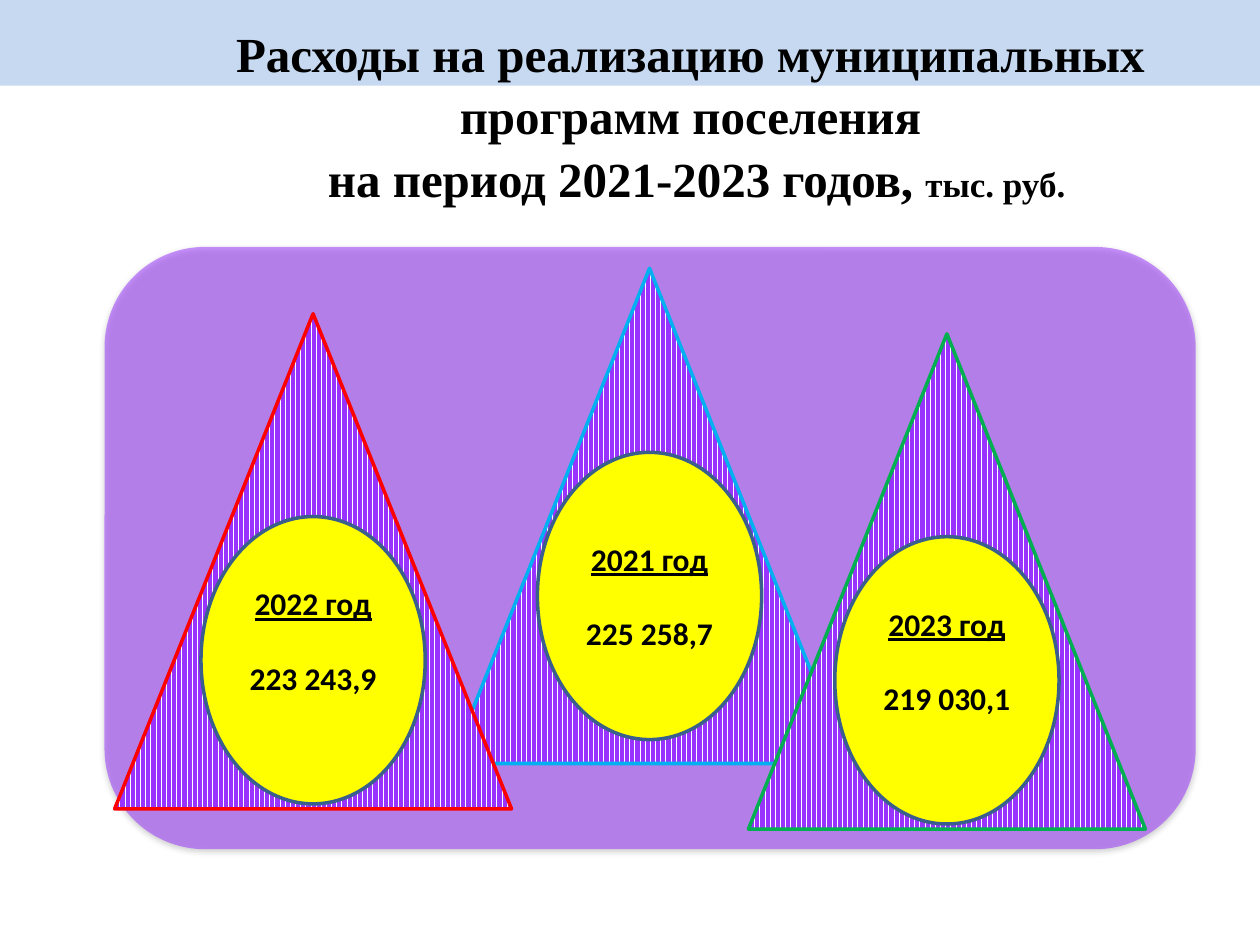
from dataclasses import dataclass

from lxml.etree import SubElement
from pptx import Presentation
from pptx.dml.color import RGBColor
from pptx.enum.dml import MSO_PATTERN
from pptx.enum.shapes import MSO_SHAPE as Shape
from pptx.enum.text import MSO_ANCHOR as Anchor, PP_ALIGN as Align
from pptx.oxml.ns import qn
from pptx.util import Inches, Pt


@dataclass(frozen=True)
class Theme:
    band: str = "C6D9F1"
    purple: str = "9933FF"
    white: str = "FFFFFF"
    yellow: str = "FFFF00"
    oval_line: str = "3A5F8C"
    ink: str = "000000"
    title_font: str = "Times New Roman"
    body_font: str = "Calibri"
    title_size: int = 28
    unit_size: int = 20
    body_size: int = 18


THEME = Theme()

# year, amount, outline, triangle left and top, oval drop, bottom text inset
YEARS = [
    ("2021 год", "225\u00a0258,7", "00B0F0", 3.58, 2.13, 1.46, 0.05),
    ("2022 год", "223\u00a0243,9", "FF0000", 0.91, 2.49, 1.61, 0.36),
    ("2023 год", "219\u00a0030,1", "00B050", 5.94, 2.65, 1.61, 0.36),
]
TRIANGLE_WIDTH, TRIANGLE_HEIGHT = 3.15, 3.93
OVAL_WIDTH, OVAL_HEIGHT = 1.78, 2.28


def rgb(code):
    return RGBColor.from_string(code)


def add_figure(slide, kind, box, fill=None, line=None):
    figure = slide.shapes.add_shape(kind, *map(Inches, box))
    figure.shadow.inherit = False
    if fill:
        figure.fill.solid()
        figure.fill.fore_color.rgb = rgb(fill)
    if line:
        figure.line.color.rgb = rgb(line)
        figure.line.width = Pt(2)
    else:
        figure.line.fill.background()
    return figure


def add_run(paragraph, text, **font_format):
    run = paragraph.add_run()
    run.text = text
    run.font.color.rgb = rgb(THEME.ink)
    for name, value in {"bold": True, **font_format}.items():
        setattr(run.font, name, value)


def add_title(slide):
    title = slide.shapes.add_textbox(*map(Inches, (1.15, 0.11, 8.66, 1.51)))
    frame = title.text_frame
    frame.word_wrap = True
    look = {"name": THEME.title_font, "size": Pt(THEME.title_size)}
    subject, period = frame.paragraphs[0], frame.add_paragraph()
    for paragraph in (subject, period):
        paragraph.alignment = Align.CENTER
        paragraph.line_spacing = 1.06
    period._p.get_or_add_pPr().set("marL", str(Inches(0.1)))
    add_run(subject, "Расходы на реализацию муниципальных программ поселения", **look)
    add_run(period, "на период 2021-2023 годов, ", **look)
    add_run(period, "тыс. руб.", **{**look, "size": Pt(THEME.unit_size)})


def add_panel(slide):
    """Translucent rounded panel with a soft shadow below it."""
    panel = add_figure(slide, Shape.ROUNDED_RECTANGLE, (0.83, 1.96, 8.66, 4.78), THEME.purple)
    properties = panel._element.spPr
    fill_color = properties.find(qn("a:solidFill"))[0]
    SubElement(fill_color, qn("a:alpha"), val="52000")
    shadow = SubElement(
        properties.find(qn("a:effectLst")), qn("a:outerShdw"),
        blurRad=str(Pt(3.1)), dist=str(Pt(1.8)), dir="5400000", rotWithShape="0")
    shadow_color = SubElement(shadow, qn("a:srgbClr"), val=THEME.ink)
    SubElement(shadow_color, qn("a:alpha"), val="35000")


def add_triangle(slide, left, top, outline):
    box = (left, top, TRIANGLE_WIDTH, TRIANGLE_HEIGHT)
    triangle = add_figure(slide, Shape.ISOSCELES_TRIANGLE, box, line=outline)
    triangle.fill.patterned()
    triangle.fill.pattern = MSO_PATTERN.DARK_VERTICAL
    triangle.fill.fore_color.rgb = rgb(THEME.purple)
    triangle.fill.back_color.rgb = rgb(THEME.white)


def add_oval(slide, left, top, year, amount, bottom_inset):
    box = (left, top, OVAL_WIDTH, OVAL_HEIGHT)
    frame = add_figure(slide, Shape.OVAL, box, THEME.yellow, THEME.oval_line).text_frame
    frame.word_wrap = True
    frame.vertical_anchor = Anchor.MIDDLE
    frame.margin_bottom = Inches(bottom_inset)
    look = {"name": THEME.body_font, "size": Pt(THEME.body_size)}
    heading, value = frame.paragraphs[0], frame.add_paragraph()
    heading.alignment = value.alignment = Align.CENTER
    value.space_before = Pt(21)
    add_run(heading, year, underline=True, **look)
    add_run(value, amount, **look)


def main():
    deck = Presentation()
    deck.slide_width, deck.slide_height = Inches(10), Inches(7.5)
    slide = deck.slides.add_slide(deck.slide_layouts[6])
    add_figure(slide, Shape.RECTANGLE, (0, 0, 10, 0.68), THEME.band)
    add_title(slide)
    add_panel(slide)
    for year, amount, outline, left, top, drop, bottom_inset in YEARS:
        add_triangle(slide, left, top, outline)
        oval_left = left + (TRIANGLE_WIDTH - OVAL_WIDTH) / 2
        add_oval(slide, oval_left, top + drop, year, amount, bottom_inset)
    deck.save("out.pptx")


if __name__ == "__main__":
    main()
